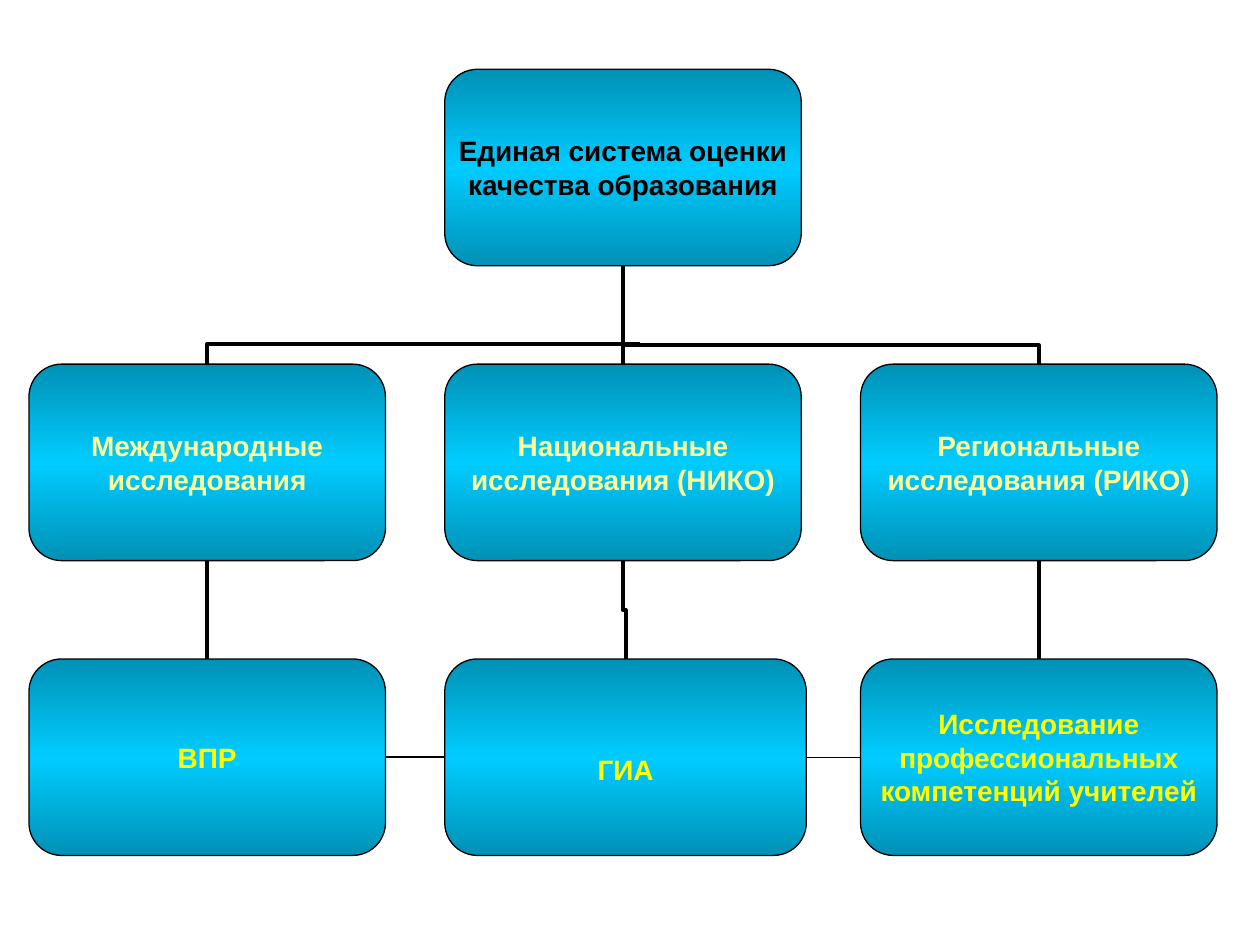
from dataclasses import dataclass

from lxml.etree import SubElement
from pptx import Presentation
from pptx.dml.color import RGBColor
from pptx.enum.shapes import MSO_CONNECTOR, MSO_SHAPE
from pptx.enum.text import MSO_ANCHOR, PP_ALIGN
from pptx.oxml import parse_xml
from pptx.oxml.ns import nsdecls, qn
from pptx.shapes.autoshape import Shape
from pptx.shapes.connector import Connector
from pptx.shapes.shapetree import SlideShapes
from pptx.util import Inches, Pt


@dataclass(frozen=True)
class Theme:
    font: str = "Arial"
    size: float = 16
    accent: str = "00CCFF"
    edge_shade: int = 46275
    line: str = "000000"
    root_text: str = "000000"
    study_text: str = "FFFF99"
    exam_text: str = "FFFF00"
    outline: float = 0.75
    tree_line: float = 2.25


@dataclass(frozen=True)
class Node:
    text: str
    column: int
    row: int
    color: str
    width: float = 2.83
    top_inset: float = 0


THEME = Theme()
LEFT, TOP = 0.23, 0.55
COLUMN_STEP, ROW_STEP = 3.3, 2.34
NODE_HEIGHT = 1.56
TOP_SIDE, LEFT_SIDE, BOTTOM_SIDE, RIGHT_SIDE = range(4)

ROOT = Node("Единая система оценки качества образования", 1, 0, THEME.root_text)
STUDIES = [
    Node("Международные исследования", 0, 1, THEME.study_text),
    Node("Национальные исследования (НИКО)", 1, 1, THEME.study_text),
    Node("Региональные исследования (РИКО)", 2, 1, THEME.study_text),
]
EXAMS = [
    Node("ВПР", 0, 2, THEME.exam_text),
    Node("ГИА", 1, 2, THEME.exam_text, width=2.87, top_inset=0.19),
    Node("Исследование профессиональных компетенций учителей", 2, 2, THEME.exam_text),
]


def write_text(shape: Shape, text: str, *, color: str, top_inset: float) -> None:
    frame = shape.text_frame
    frame.word_wrap = True
    frame.vertical_anchor = MSO_ANCHOR.MIDDLE
    frame.margin_left = frame.margin_right = frame.margin_bottom = 0
    frame.margin_top = Inches(top_inset)
    paragraph = frame.paragraphs[0]
    paragraph.alignment = PP_ALIGN.CENTER
    run = paragraph.add_run()
    run.text = text
    run.font.name = THEME.font
    run.font.size = Pt(THEME.size)
    run.font.bold = True
    run.font.color.rgb = RGBColor.from_string(color)


def fill_gradient(shape: Shape) -> None:
    shade = f'<a:shade val="{THEME.edge_shade}"/>'
    stops = "".join(
        f'<a:gs pos="{position}"><a:srgbClr val="{THEME.accent}">{effect}</a:srgbClr></a:gs>'
        for position, effect in ((0, shade), (50000, ""), (100000, shade))
    )
    shape._element.spPr.append(parse_xml(
        f'<a:gradFill {nsdecls("a")} rotWithShape="1"><a:gsLst>{stops}</a:gsLst>'
        '<a:lin ang="5400000" scaled="1"/></a:gradFill>'
    ))


def draw_node(shapes: SlideShapes, node: Node) -> Shape:
    box = shapes.add_shape(
        MSO_SHAPE.ROUNDED_RECTANGLE,
        Inches(LEFT + node.column * COLUMN_STEP),
        Inches(TOP + node.row * ROW_STEP),
        Inches(node.width),
        Inches(NODE_HEIGHT),
    )
    fill_gradient(box)
    box.line.color.rgb = RGBColor.from_string(THEME.line)
    box.line.width = Pt(THEME.outline)
    box.shadow.inherit = False
    write_text(box, node.text, color=node.color, top_inset=node.top_inset)
    return box


def style_line(line: Connector, weight: float) -> None:
    line.line.color.rgb = RGBColor.from_string(THEME.line)
    line.line.width = Pt(weight)
    SubElement(line._element.spPr, qn("a:effectLst"))


def join(shapes: SlideShapes, start: Shape, start_side: int,
         end: Shape, end_side: int, weight: float) -> None:
    line = shapes.add_connector(MSO_CONNECTOR.STRAIGHT, 0, 0, 0, 0)
    line.begin_connect(start, start_side)
    line.end_connect(end, end_side)
    style_line(line, weight)


def bend_up(shapes: SlideShapes, child: Shape, end_x: int, end_y: int,
            bend: float | None = None) -> None:
    start_x, start_y = child.left + child.width // 2, child.top
    rise, run = start_y - end_y, abs(end_x - start_x)
    line = shapes.add_connector(MSO_CONNECTOR.ELBOW, 0, 0, 0, 0)
    line.left = (start_x + end_x - rise) // 2
    line.top = (start_y + end_y - run) // 2
    line.width, line.height = rise, run
    properties = line._element.spPr
    frame = properties.find(qn("a:xfrm"))
    frame.set("rot", str(270 * 60000))
    if end_x < start_x:
        frame.set("flipV", "1")
    geometry = properties.find(qn("a:prstGeom"))
    if bend is None:
        geometry.set("prst", "bentConnector2")
    else:
        SubElement(geometry.find(qn("a:avLst")), qn("a:gd"),
                   name="adj1", fmla=f"val {round(bend * 100000)}")
    style_line(line, THEME.tree_line)


def main() -> None:
    presentation = Presentation()
    presentation.slide_width, presentation.slide_height = Inches(10), Inches(7.5)
    shapes = presentation.slides.add_slide(presentation.slide_layouts[6]).shapes

    root = draw_node(shapes, ROOT)
    international, national, regional = studies = [draw_node(shapes, n) for n in STUDIES]
    vpr, gia, teachers = [draw_node(shapes, n) for n in EXAMS]

    root_x, root_y = root.left + root.width // 2, root.top + root.height
    bend_up(shapes, international, Inches(5.08), Inches(2.73))
    bend_up(shapes, regional, root_x, root_y, bend=0.19)
    bend_up(shapes, gia, root_x, national.top + national.height, bend=0.5)

    for child, parent in ((national, root), (vpr, international), (teachers, regional)):
        join(shapes, child, TOP_SIDE, parent, BOTTOM_SIDE, THEME.tree_line)
    for start, end, weight in ((vpr, gia, 1), (gia, teachers, THEME.outline)):
        join(shapes, start, RIGHT_SIDE, end, LEFT_SIDE, weight)

    presentation.save("out.pptx")


if __name__ == "__main__":
    main()
